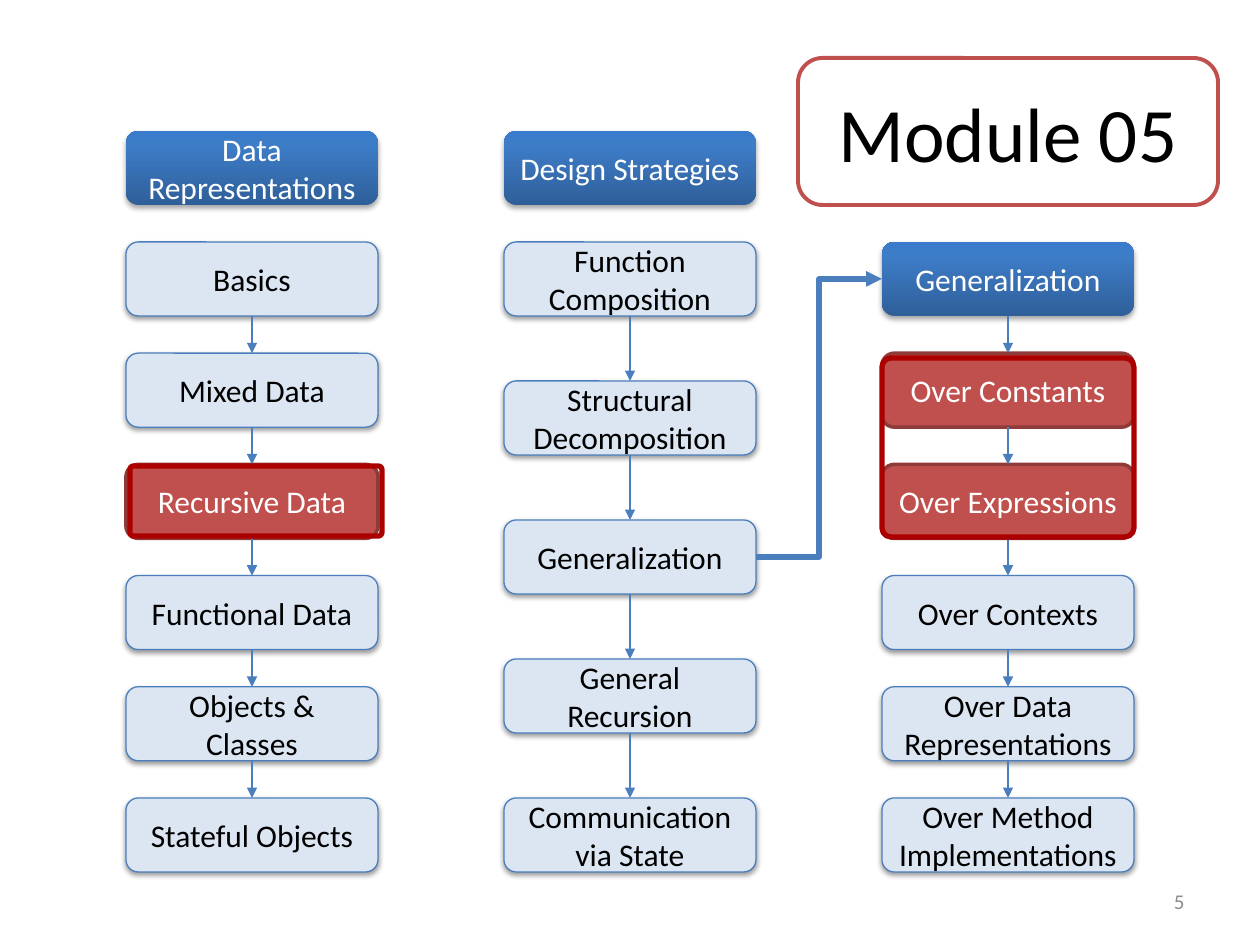
from copy import deepcopy

from pptx import Presentation
from pptx import util as u
from pptx.dml.color import RGBColor
from pptx.enum import shapes, text
from pptx.oxml import parse_xml
from pptx.oxml import ns
from pptx.oxml.xmlchemy import OxmlElement

PX = 914400 / 126
WHITE = RGBColor(0xFF, 0xFF, 0xFF)
BLACK = RGBColor(0x00, 0x00, 0x00)
GRAY = RGBColor(0x8C, 0x8C, 0x8C)
BLUE = RGBColor(0x4B, 0x7E, 0xBC)
PALE_BLUE = RGBColor(0xDC, 0xE6, 0xF2)
RED = RGBColor(0xC0, 0x50, 0x4D)
DARK_RED = RGBColor(0x8E, 0x3B, 0x39)
HIGHLIGHT = RGBColor(0xAC, 0x00, 0x00)
HEADER_STOPS = [
    (0, RGBColor(0x2F, 0x5F, 0x99)),
    (0.8, RGBColor(0x3D, 0x7C, 0xC7)),
    (1, RGBColor(0x3A, 0x7C, 0xCB)),
]

BOX_WIDTH, BOX_HEIGHT = 252, 74
HEADER_TOP, CHAIN_TOP, CHAIN_SPAN = 131, 242, 556
HEADER, TOPIC, CURRENT = "header", "topic", "current"


def emu(*lengths):
    """Turn pixel lengths into EMU."""
    return [u.Emu(round(length * PX)) for length in lengths]


def write(shape, words, size, color, align=text.PP_ALIGN.CENTER):
    """Put one vertically centred paragraph into a shape."""
    frame = shape.text_frame
    frame.word_wrap = True
    frame.vertical_anchor = text.MSO_ANCHOR.MIDDLE
    paragraph = frame.paragraphs[0]
    paragraph.text = words
    paragraph.alignment = align
    paragraph.font.name = "Calibri"
    paragraph.font.size = u.Pt(size)
    paragraph.font.color.rgb = color


def add_rounded(slide, box, line_color=None, line_width=0):
    """Add an unfilled rounded rectangle without a shadow."""
    shape = slide.shapes.add_shape(shapes.MSO_SHAPE.ROUNDED_RECTANGLE, *emu(*box))
    shape.shadow.inherit = False
    shape.fill.background()
    if line_color is None:
        shape.line.fill.background()
    else:
        shape.line.color.rgb = line_color
        shape.line.width = u.Pt(line_width)
    return shape


def add_shadow(shape, distance, opacity):
    """Give a shape a soft shadow below it."""
    effects = shape._element.spPr.find(ns.qn("a:effectLst"))
    effects.append(parse_xml(
        f'<a:outerShdw {ns.nsdecls("a")} blurRad="{u.Pt(3.1)}" dist="{u.Pt(distance)}" '
        f'dir="5400000" rotWithShape="0"><a:srgbClr val="000000">'
        f'<a:alpha val="{opacity * 1000}"/></a:srgbClr></a:outerShdw>'))


def fill_header(shape):
    """Fill a shape with the three-stop header gradient."""
    shape.fill.gradient()
    stop_list = shape._element.spPr.find(".//" + ns.qn("a:gsLst"))
    stop_list.append(deepcopy(stop_list[0]))
    for stop, (position, color) in zip(shape.fill.gradient_stops, HEADER_STOPS):
        stop.position = position
        stop.color.rgb = color
    shape.fill.gradient_angle = 90


def add_box(slide, left, top, words, kind):
    """Add one labelled box of the given kind."""
    box = (left, top, BOX_WIDTH, BOX_HEIGHT)
    if kind == HEADER:
        shape = add_rounded(slide, box)
        fill_header(shape)
        add_shadow(shape, 1.8, 35)
    elif kind == CURRENT:
        shape = add_rounded(slide, box, DARK_RED, 2)
        shape.fill.solid()
        shape.fill.fore_color.rgb = RED
    else:
        shape = add_rounded(slide, box, BLUE, 0.75)
        shape.fill.solid()
        shape.fill.fore_color.rgb = PALE_BLUE
        add_shadow(shape, 1.6, 38)
    write(shape, words, 18, BLACK if kind == TOPIC else WHITE)


def add_arrow(slide, start, end, width=0.75, kind=shapes.MSO_CONNECTOR.STRAIGHT):
    """Add a blue connector with a triangle at its end."""
    connector = slide.shapes.add_connector(kind, *emu(*start, *end))
    connector.line.color.rgb = BLUE
    connector.line.width = u.Pt(width)
    properties = connector._element.spPr
    head = OxmlElement("a:tailEnd")
    head.set("type", "triangle")
    properties.find(ns.qn("a:ln")).append(head)
    properties.append(OxmlElement("a:effectLst"))


def add_chain(slide, left, top, span, steps):
    """Spread boxes evenly down a column and join them with arrows."""
    tops = [top + span * index / (len(steps) - 1) for index in range(len(steps))]
    for box_top, (words, kind) in zip(tops, steps):
        add_box(slide, left, box_top, words, kind)
    center = left + BOX_WIDTH / 2
    for upper, lower in zip(tops, tops[1:]):
        add_arrow(slide, (center, upper + BOX_HEIGHT), (center, lower))


def add_title(slide, box):
    """Add the outlined module title."""
    write(add_rounded(slide, box, RED, 2.25), "Module 05", 44, BLACK)


def add_highlight(slide, box):
    """Frame the topics of this module."""
    add_rounded(slide, box, HIGHLIGHT, 3).adjustments[0] = 0.05


def add_slide_number(slide, box):
    """Add the slide number."""
    shape = slide.shapes.add_textbox(*emu(*box))
    write(shape, "5", 12, GRAY, text.PP_ALIGN.RIGHT)


def main():
    """Build the module overview slide."""
    presentation = Presentation()
    presentation.slide_width, presentation.slide_height = emu(1260, 945)
    slide = presentation.slides.add_slide(presentation.slide_layouts[6])

    data_left, design_left, general_left = 126, 504, 882
    add_box(slide, data_left, HEADER_TOP, "Data Representations", HEADER)
    add_chain(slide, data_left, CHAIN_TOP, CHAIN_SPAN, [
        ("Basics", TOPIC),
        ("Mixed Data", TOPIC),
        ("Recursive Data", CURRENT),
        ("Functional Data", TOPIC),
        ("Objects & Classes", TOPIC),
        ("Stateful Objects", TOPIC),
    ])
    add_box(slide, design_left, HEADER_TOP, "Design Strategies", HEADER)
    add_chain(slide, design_left, CHAIN_TOP, CHAIN_SPAN, [
        ("Function Composition", TOPIC),
        ("Structural Decomposition", TOPIC),
        ("Generalization", TOPIC),
        ("General Recursion", TOPIC),
        ("Communication via State", TOPIC),
    ])
    add_chain(slide, general_left, CHAIN_TOP, CHAIN_SPAN, [
        ("Generalization", HEADER),
        ("Over Constants", CURRENT),
        ("Over Expressions", CURRENT),
        ("Over Contexts", TOPIC),
        ("Over Data Representations", TOPIC),
        ("Over Method Implementations", TOPIC),
    ])
    add_title(slide, (798, 58, 420, 147))
    middle = CHAIN_TOP + BOX_HEIGHT / 2
    add_arrow(slide, (design_left + BOX_WIDTH, middle + CHAIN_SPAN / 2),
              (general_left, middle), 3, shapes.MSO_CONNECTOR.ELBOW)
    add_highlight(slide, (130, 466, 252, 70))
    add_highlight(slide, (882, 358, 252, 179))
    add_slide_number(slide, (903, 876, 294, 50))
    presentation.save("out.pptx")


if __name__ == "__main__":
    main()
